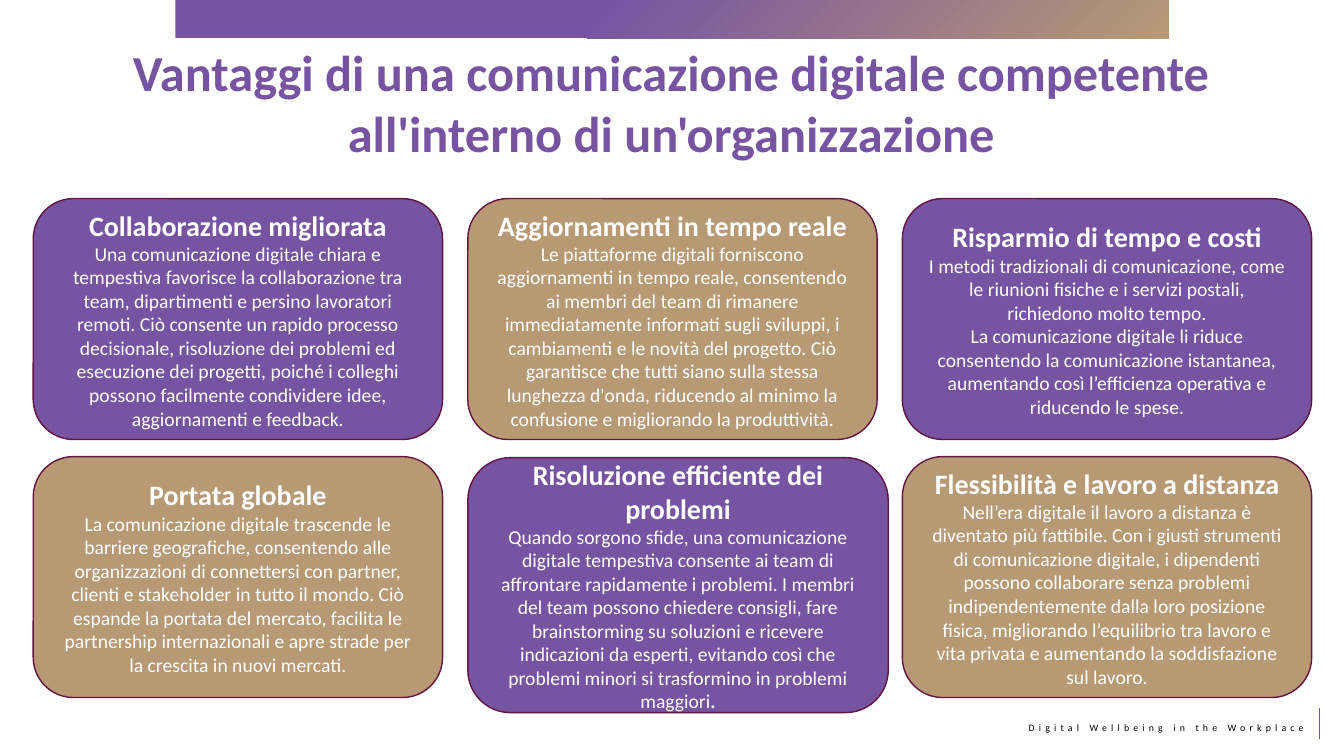
from lxml import etree
from pptx import Presentation
from pptx.dml.color import RGBColor
from pptx.enum.shapes import MSO_CONNECTOR as Connector, MSO_SHAPE as Preset
from pptx.enum.text import MSO_ANCHOR as Anchor, PP_ALIGN as Align
from pptx.oxml import parse_xml
from pptx.oxml.ns import nsdecls, qn
from pptx.util import Pt

PX = 9144
FONT = "Calibri"
PURPLE, TAN, PLUM, WHITE, BLACK = "7654A2", "B79974", "631440", "FFFFFF", "000000"

COLUMN_LEFT, COLUMN_PITCH = 33, 431
ROW_TOP, ROW_PITCH = 197, 256
CARD_WIDTH, CARD_HEIGHT = 406, 239
TALL_CARD = 4

CARDS = [
    ("Collaborazione migliorata",
     ["Una comunicazione digitale chiara e tempestiva favorisce la collaborazione tra team, "
      "dipartimenti e persino lavoratori remoti. Ciò consente un rapido processo decisionale, "
      "risoluzione dei problemi ed esecuzione dei progetti, poiché i colleghi possono facilmente "
      "condividere idee, aggiornamenti e feedback."]),
    ("Aggiornamenti in tempo reale",
     ["Le piattaforme digitali forniscono aggiornamenti in tempo reale, consentendo ai membri del "
      "team di rimanere immediatamente informati sugli sviluppi, i cambiamenti e le novità del "
      "progetto. Ciò garantisce che tutti siano sulla stessa lunghezza d'onda, riducendo al minimo "
      "la confusione e migliorando la produttività."]),
    ("Risparmio di tempo e costi",
     ["I metodi tradizionali di comunicazione, come le riunioni fisiche e i servizi postali, "
      "richiedono molto tempo.",
      "La comunicazione digitale li riduce consentendo la comunicazione istantanea, aumentando "
      "così l’efficienza operativa e riducendo le spese."]),
    ("Portata globale",
     ["La comunicazione digitale trascende le barriere geografiche, consentendo alle "
      "organizzazioni di connettersi con partner, clienti e stakeholder in tutto il mondo. Ciò "
      "espande la portata del mercato, facilita le partnership internazionali e apre strade per "
      "la crescita in nuovi mercati."]),
    ("Risoluzione efficiente dei problemi",
     ["Quando sorgono sfide, una comunicazione digitale tempestiva consente ai team di affrontare "
      "rapidamente i problemi. I membri del team possono chiedere consigli, fare brainstorming su "
      "soluzioni e ricevere indicazioni da esperti, evitando così che problemi minori si "
      "trasformino in problemi maggiori"]),
    ("Flessibilità e lavoro a distanza",
     ["Nell’era digitale il lavoro a distanza è diventato più fattibile. Con i giusti strumenti di "
      "comunicazione digitale, i dipendenti possono collaborare senza problemi indipendentemente "
      "dalla loro posizione fisica, migliorando l’equilibrio tra lavoro e vita privata e "
      "aumentando la soddisfazione sul lavoro."]),
]


def color(code):
    """Turn a hex string into a colour."""
    return RGBColor.from_string(code)


def emu(box):
    """Turn lengths in px into EMU."""
    return [length * PX for length in box]


def add_text(shapes, box, lines, align=Align.CENTER, anchor=Anchor.TOP):
    """Add a wrapped text box of (text, size, colour, bold) lines and return its frame."""
    frame = shapes.add_textbox(*emu(box)).text_frame
    frame.word_wrap = True
    frame.vertical_anchor = anchor
    for index, (text, size, code, bold) in enumerate(lines):
        para = frame.paragraphs[0] if index == 0 else frame.add_paragraph()
        para.alignment = align
        para.font.name, para.font.size, para.font.bold = FONT, Pt(size), bold
        para.font.color.rgb = color(code)
        para.add_run().text = text
    return frame


def add_banner(page, box):
    """Draw the top band with a radial gradient from its lower right corner."""
    band = page.shapes.add_shape(Preset.RECTANGLE, *emu(box))
    band.shadow.inherit = False
    band.line.fill.background()
    gradient = parse_xml(
        f'<a:gradFill {nsdecls("a")} rotWithShape="1"><a:gsLst>'
        f'<a:gs pos="0"><a:srgbClr val="{TAN}"/></a:gs>'
        f'<a:gs pos="58000"><a:srgbClr val="{PURPLE}"/></a:gs></a:gsLst>'
        '<a:path path="circle"><a:fillToRect l="100000" t="100000"/></a:path></a:gradFill>')
    band._element.spPr.find(qn("a:prstGeom")).addnext(gradient)


def add_card(page, box, code, heading, body):
    """Group a rounded card with its heading and body text."""
    left, top, width, height = box
    group = page.shapes.add_group_shape()
    card = group.shapes.add_shape(Preset.ROUNDED_RECTANGLE, *emu(box))
    card.shadow.inherit = False
    card.fill.solid()
    card.fill.fore_color.rgb = color(code)
    card.line.color.rgb = color(PLUM)
    card.line.width = Pt(1)
    lines = [(heading, 20, WHITE, True)] + [(text, 14, WHITE, False) for text in body]
    frame = add_text(group.shapes, (left + 14, top, width - 28, height), lines,
                     anchor=Anchor.MIDDLE)
    frame.margin_top = frame.margin_bottom = 0
    return frame


def add_cards(page):
    """Lay the cards out in three columns with alternating fills."""
    for index, (heading, body) in enumerate(CARDS):
        row, column = divmod(index, 3)
        left, top = COLUMN_LEFT + column * COLUMN_PITCH, ROW_TOP + row * ROW_PITCH
        width, height = CARD_WIDTH, CARD_HEIGHT
        if index == TALL_CARD:
            top, width, height = top + 1, 417, 253
        code = TAN if index % 2 else PURPLE
        frame = add_card(page, (left, top, width, height), code, heading, body)
        if index == TALL_CARD:
            span = frame.paragraphs[-1].add_run()
            span.text = "."
            span.font.bold = True


def add_footer(page, box):
    """Add the spaced footer text and the short rule to its right."""
    left, top, width, height = box
    frame = add_text(page.shapes, box, [("Digital Wellbeing in the Workplace", 7, BLACK, False)],
                     align=Align.RIGHT)
    frame.paragraphs[0].runs[0].font._element.set("spc", "300")
    rule_left = left + width + 6
    rule = page.shapes.add_connector(
        Connector.STRAIGHT, *emu((rule_left, top + height, rule_left, top - 9)))
    rule.line.color.rgb = color(PURPLE)
    rule.line.width = Pt(0.75)
    etree.SubElement(rule._element.spPr, qn("a:effectLst"))


def main():
    """Build and save the slide."""
    deck = Presentation()
    deck.slide_width, deck.slide_height = emu((1333, 750))
    page = deck.slides.add_slide(deck.slide_layouts[6])
    add_footer(page, (968, 711, 335, 22))
    add_banner(page, (174, 0, 985, 38))
    title = "Vantaggi di una comunicazione digitale competente all'interno di un'organizzazione"
    add_text(page.shapes, (93, 36, 1146, 88), [(title, 36, PURPLE, True)])
    add_cards(page)
    deck.save("out.pptx")


if __name__ == "__main__":
    main()
